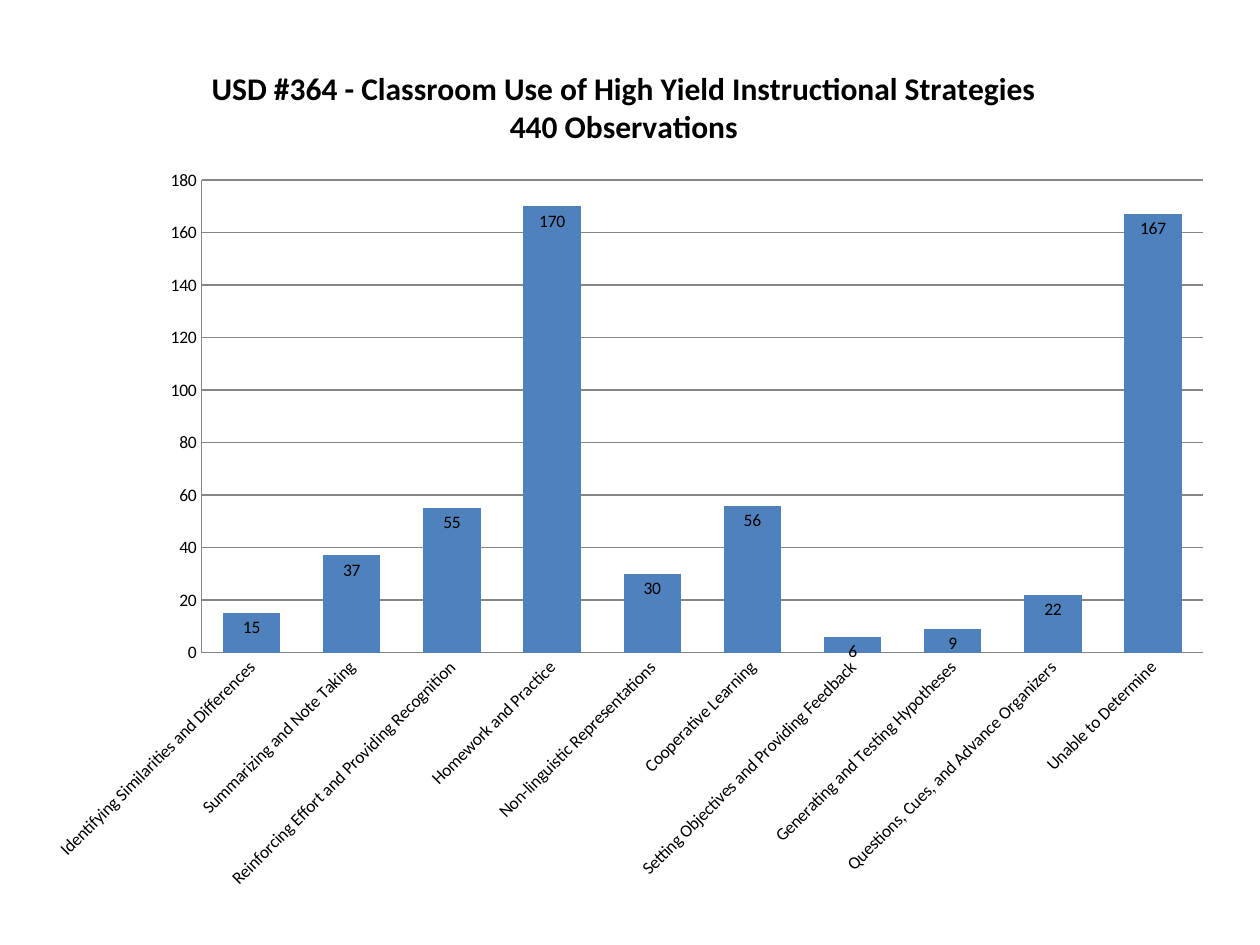
from dataclasses import dataclass

from pptx import Presentation
from pptx.chart.data import CategoryChartData
from pptx.dml.color import RGBColor
from pptx.enum.chart import XL_CHART_TYPE, XL_LABEL_POSITION, XL_TICK_MARK
from pptx.enum.text import PP_ALIGN
from pptx.oxml import parse_xml
from pptx.oxml.ns import nsdecls, qn
from pptx.util import Inches, Pt


@dataclass(frozen=True)
class Theme:
    font: str = "Calibri"
    text: RGBColor = RGBColor(0x00, 0x00, 0x00)
    bar: RGBColor = RGBColor(0x4F, 0x81, 0xBD)
    grid: RGBColor = RGBColor(0x86, 0x86, 0x86)
    title_size: int = 18
    label_size: int = 10
    line_width: float = 0.75


THEME = Theme()
TITLE = "USD #364 - Classroom Use of High Yield Instructional Strategies\n440 Observations"
STRATEGIES = {
    "Identifying Similarities and Differences": 15,
    "Summarizing and Note Taking": 37,
    "Reinforcing Effort and Providing Recognition": 55,
    "Homework and Practice": 170,
    "Non-linguistic Representations": 30,
    "Cooperative Learning": 56,
    "Setting Objectives and Providing Feedback": 6,
    "Generating and Testing Hypotheses": 9,
    "Questions, Cues, and Advance Organizers": 22,
    "Unable to Determine": 167,
}


def format_font(font, size, bold=False):
    font.name = THEME.font
    font.size = Pt(size)
    font.bold = bold
    font.color.rgb = THEME.text


def write_text(tf, text, size=THEME.label_size, bold=False, align=PP_ALIGN.CENTER):
    for i, line in enumerate(text.split("\n")):
        p = tf.add_paragraph() if i else tf.paragraphs[0]
        p.alignment = align
        r = p.add_run()
        r.text = line
        format_font(r.font, size, bold)


def format_line(line):
    line.color.rgb = THEME.grid
    line.width = Pt(THEME.line_width)


def set_layout(element, index, **fractions):
    for old in element.findall(qn("c:layout")):
        element.remove(old)
    target = '<c:layoutTarget val="inner"/>' if "w" in fractions else ""
    modes = "".join(f'<c:{k}Mode val="edge"/>' for k in "xy")
    values = "".join(f'<c:{k} val="{v}"/>' for k, v in fractions.items())
    element.insert(index, parse_xml(
        f'<c:layout {nsdecls("c")}><c:manualLayout>{target}{modes}{values}'
        "</c:manualLayout></c:layout>"))


def format_axes(chart):
    for axis in (chart.category_axis, chart.value_axis):
        axis.major_tick_mark = axis.minor_tick_mark = XL_TICK_MARK.NONE
        format_font(axis.tick_labels.font, THEME.label_size)
        format_line(axis.format.line)
    body = chart.category_axis._element.find(qn("c:txPr")).find(qn("a:bodyPr"))
    body.set("rot", str(-45 * 60000))
    body.set("vert", "horz")
    values = chart.value_axis
    values.minimum_scale, values.maximum_scale, values.major_unit = 0, 180, 20
    values.has_major_gridlines = True
    format_line(values.major_gridlines.format.line)


def format_bars(plot):
    plot.gap_width, plot.overlap = 75, 40
    plot.vary_by_categories = False
    fill = plot.series[0].format.fill
    fill.solid()
    fill.fore_color.rgb = THEME.bar
    plot.has_data_labels = True
    labels = plot.data_labels
    labels.show_value = True
    labels.position = XL_LABEL_POSITION.INSIDE_END
    format_font(labels.font, THEME.label_size)


def add_strategy_chart(s, left, top, width, height):
    data = CategoryChartData()
    data.categories = list(STRATEGIES)
    data.add_series("Series 1", list(STRATEGIES.values()))
    chart = s.shapes.add_chart(
        XL_CHART_TYPE.COLUMN_CLUSTERED, left, top, width, height, data).chart
    format_font(chart.font, THEME.label_size)
    chart.has_legend = False
    chart.has_title = True
    title = chart.chart_title
    write_text(title.text_frame, TITLE, size=THEME.title_size, bold=True)
    title.include_in_layout = False
    set_layout(title._element, 1, x=Inches(1.39) / width, y=Inches(0.19) / height)
    plot_area = chart._chartSpace.chart.plotArea
    set_layout(plot_area, 0, x=Inches(1.34) / width, y=Inches(1.11) / height,
               w=Inches(7.95) / width, h=Inches(3.75) / height)
    format_axes(chart)
    format_bars(chart.plots[0])


def main():
    prs = Presentation()
    prs.slide_width, prs.slide_height = Inches(10), Inches(7.5)
    s = prs.slides.add_slide(prs.slide_layouts[6])
    add_strategy_chart(s, Inches(0.26), Inches(0.32), Inches(9.48), Inches(6.87))
    prs.save("out.pptx")


if __name__ == "__main__":
    main()
